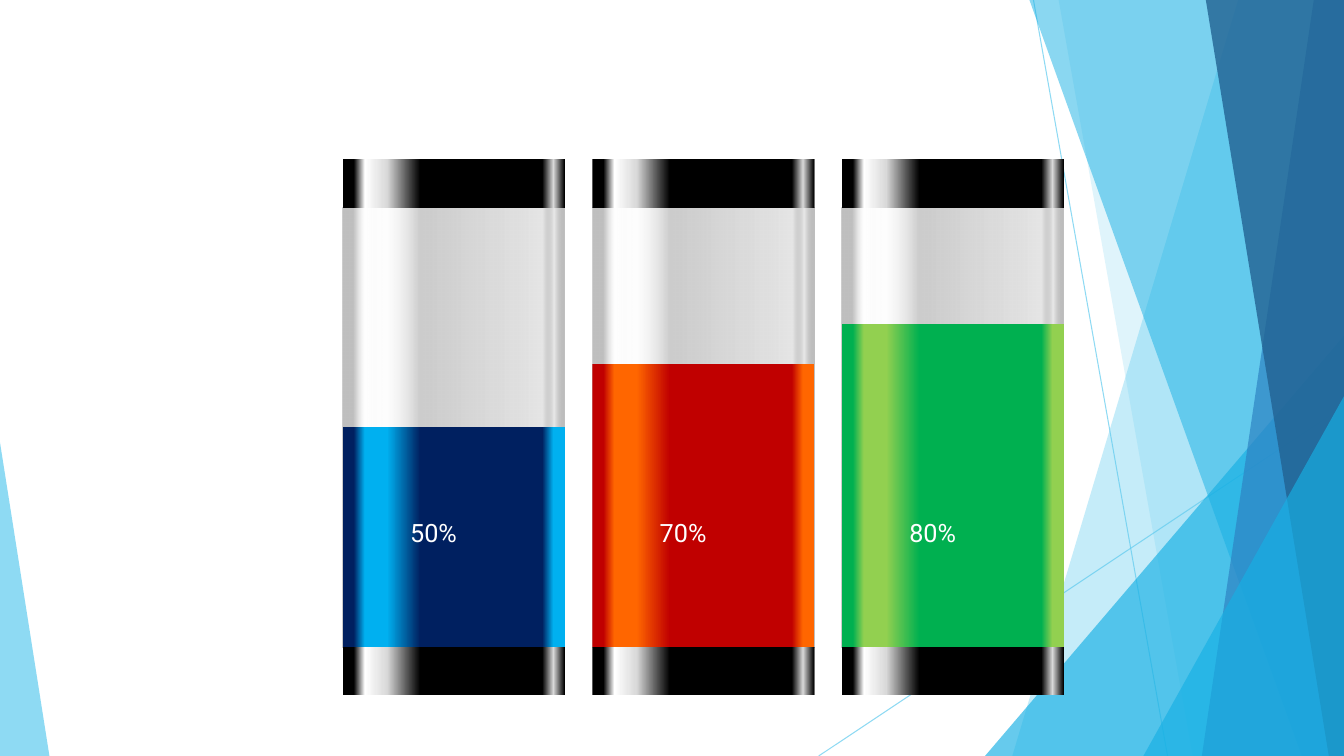
"""Build a slide with three glass tubes filled to different levels."""
import lxml.etree
import pptx
import pptx.dml.color
import pptx.enum.shapes
import pptx.enum.text
import pptx.oxml.ns
import pptx.util

W, H = 13.33, 7.5
SHAPES = pptx.enum.shapes.MSO_SHAPE
COLORS = {
    "black": "000000", "white": "FFFFFF", "silver": "D9D9D9",
    "navy": "002060", "azure": "00B0F0", "crimson": "C00000", "orange": "FF6600",
    "green": "00B050", "lime": "92D050",
    "sky": "5FCBEF", "cyan": "17B0E4", "blue": "2E83C3", "steel": "226292",
}
TUBES = [
    ("50%", 0.5, "navy", "azure"),
    ("70%", 0.645, "crimson", "orange"),
    ("80%", 0.736, "green", "lime"),
]
STOPS = (5, 10, 20, 35, 90, 95, 100)
METAL = ("black", "white", "silver", "black", "black", "silver", "black")
GLASS_ALPHA = (25, 15, 5, 20, 10, 55, 25)
SOLID = (100,) * len(STOPS)
FIRST_LEFT, LAST_LEFT, TUBE_W = 3.4, 8.35, 2.2
BODY_TOP, BODY_H, CAP_H = 2.06, 4.36, 0.48
LABEL_BOX = (0.57, 5.08, 1.06, 0.58)
LABEL_FONT = {"name": "Roboto", "size": pptx.util.Pt(18)}

RAYS = [((10.25, 0), (11.58, H)), ((W, 4.03), (8.12, H))]
FACETS = [
    ("band", 12.28, 10.04, "sky", 36),
    ("band", 10.5, 11.83, "sky", 20),
    ("corner", (9.77, 3.33, 3.56, 4.17), 1, "cyan", 66),
    ("band", 10.21, 12.91, "cyan", 50),
    ("band", 13.03, 11.92, "blue", 70),
    ("band", 11.96, 13.18, "steel", 80),
    ("corner", (11.34, 3.93, 1.99, 3.57), 1, "cyan", 66),
    ("corner", (0, 4.39, 0.49, 3.11), 0, "sky", 70),
]


def inches(values):
    return [pptx.util.Inches(v) for v in values]


def rgb(name):
    return pptx.dml.color.RGBColor.from_string(COLORS[name])


def add_child(parent, tag, **attrs):
    return lxml.etree.SubElement(parent, pptx.oxml.ns.qn(tag), **attrs)


def set_alpha(sp, percent):
    for color in sp._element.spPr.iter(pptx.oxml.ns.qn("a:srgbClr")):
        add_child(color, "a:alpha", val=str(percent * 1000))


def fill_solid(sp, color, alpha):
    sp.shadow.inherit = False
    sp.line.fill.background()
    sp.fill.solid()
    sp.fill.fore_color.rgb = rgb(color)
    set_alpha(sp, alpha)


def add_ray(shapes, start, end):
    line = shapes.add_connector(
        pptx.enum.shapes.MSO_CONNECTOR.STRAIGHT, *inches(start + end))
    line.line.color.rgb = rgb("sky")
    line.line.width = pptx.util.Pt(0.75)
    set_alpha(line, 70)
    add_child(line._element.spPr, "a:effectLst")


def add_facet(shapes, kind, place, foot, color, alpha):
    if kind == "band":
        pen = shapes.build_freeform(*inches((place, 0)), scale=1.0)
        pen.add_line_segments([inches(p) for p in ((W, 0), (W, H), (foot, H))])
        sp = pen.convert_to_shape()
    else:
        sp = shapes.add_shape(SHAPES.ISOSCELES_TRIANGLE, *inches(place))
        sp.adjustments[0] = foot
    fill_solid(sp, color, alpha)


def add_cylinder(shapes, box, colors, alphas=SOLID):
    sp = shapes.add_shape(SHAPES.RECTANGLE, *inches(box))
    sp.shadow.inherit = False
    sp.line.fill.background()
    sp.fill.gradient()
    sp.fill.gradient_angle = 0
    stops = sp._element.spPr.find(".//" + pptx.oxml.ns.qn("a:gsLst"))
    for old in list(stops):
        stops.remove(old)
    for pos, color, alpha in zip(STOPS, colors, alphas):
        gs = add_child(stops, "a:gs", pos=str(pos * 1000))
        clr = add_child(gs, "a:srgbClr", val=COLORS[color])
        if alpha < 100:
            add_child(clr, "a:alpha", val=str(alpha * 1000))


def add_label(shapes, left, text):
    dx, top, width, height = LABEL_BOX
    tf = shapes.add_textbox(*inches((left + dx, top, width, height))).text_frame
    tf.word_wrap = True
    tf.auto_size = pptx.enum.text.MSO_AUTO_SIZE.SHAPE_TO_FIT_TEXT
    r = tf.paragraphs[0].add_run()
    r.text = text
    for key, value in LABEL_FONT.items():
        setattr(r.font, key, value)
    r.font.color.rgb = rgb("white")


def add_tube(shapes, left, text, level, dark, light):
    bottom = BODY_TOP + BODY_H
    liquid_h = BODY_H * level
    liquid = (dark, light, light, dark, dark, light, light)
    add_cylinder(shapes, (left, BODY_TOP, TUBE_W, BODY_H), METAL, GLASS_ALPHA)
    add_cylinder(shapes, (left, bottom - liquid_h, TUBE_W, liquid_h), liquid)
    for top in (BODY_TOP - CAP_H, bottom):
        add_cylinder(shapes, (left, top, TUBE_W, CAP_H), METAL)
    add_label(shapes, left, text)


def main():
    prs = pptx.Presentation()
    prs.slide_width, prs.slide_height = inches((W, H))
    shapes = prs.slides.add_slide(prs.slide_layouts[6]).shapes
    for start, end in RAYS:
        add_ray(shapes, start, end)
    for facet in FACETS:
        add_facet(shapes, *facet)
    pitch = (LAST_LEFT - FIRST_LEFT) / (len(TUBES) - 1)
    for i, tube in enumerate(TUBES):
        add_tube(shapes, FIRST_LEFT + i * pitch, *tube)
    prs.save("out.pptx")


if __name__ == "__main__":
    main()
